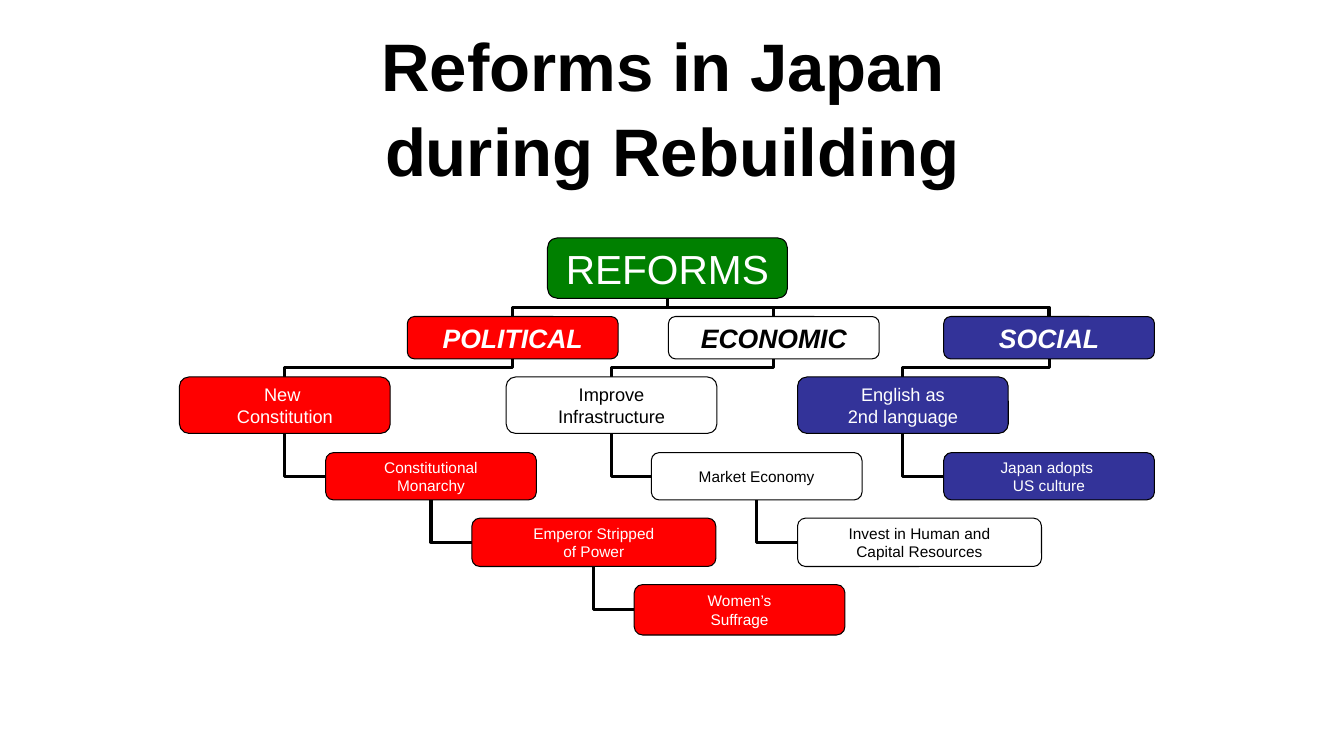
from pptx import Presentation
from pptx.dml.color import RGBColor
from pptx.enum.shapes import MSO_CONNECTOR, MSO_SHAPE
from pptx.enum.text import MSO_ANCHOR, MSO_AUTO_SIZE, PP_ALIGN
from pptx.oxml.ns import qn
from pptx.util import Emu, Pt
from lxml import etree

ELBOW = MSO_CONNECTOR.ELBOW
ROUNDED = MSO_SHAPE.ROUNDED_RECTANGLE
MIDDLE = MSO_ANCHOR.MIDDLE
CENTER = PP_ALIGN.CENTER
NO_FIT = MSO_AUTO_SIZE.NONE

PX = 9144  # 100 px to the inch
QUARTER_TURN = "5400000"

THEME = {
    "font": "Arial",
    "black": RGBColor(0x00, 0x00, 0x00),
    "white": RGBColor(0xFF, 0xFF, 0xFF),
    "green": RGBColor(0x00, 0x80, 0x00),
    "red": RGBColor(0xFF, 0x00, 0x00),
    "blue": RGBColor(0x33, 0x33, 0x99),
    "title": 48, "root": 29, "branch": 19, "topic": 13, "detail": 11,
    "outline": 0.75, "link": 2.25,
}


def write_text(shape, text, *, size, color, bold=False, italic=False,
               inset=(10, 5), wrap=False, spacing=None):
    frame = shape.text_frame
    frame.auto_size = NO_FIT
    frame.word_wrap = wrap
    frame.vertical_anchor = MIDDLE
    frame.margin_left = frame.margin_right = Emu(inset[0] * PX)
    frame.margin_top = frame.margin_bottom = Emu(inset[1] * PX)
    frame.text = text
    for para in frame.paragraphs:
        para.alignment = CENTER
        para.line_spacing = spacing
        for span in para.runs:
            span.font.name = THEME["font"]
            span.font.size = Pt(THEME[size])
            span.font.bold = bold
            span.font.italic = italic
            span.font.color.rgb = THEME[color]


def add_elbow(shapes, x1, y1, x2, y2):
    link = shapes.add_connector(ELBOW, *(Emu(round(v * PX)) for v in (x1, y1, x2, y2)))
    link.line.color.rgb = THEME["black"]
    link.line.width = Pt(THEME["link"])
    etree.SubElement(link._element.spPr, qn("a:effectLst"))
    return link


deck = Presentation()
deck.slide_width = Emu(1333 * PX)
deck.slide_height = Emu(750 * PX)
page = deck.slides.add_slide(deck.slide_layouts[5])
shapes = page.shapes

# Title
title = shapes.title
title.left, title.top, title.width, title.height = (
    Emu(v * PX) for v in (217, 30, 900, 148))
write_text(title, "Reforms in Japan \vduring Rebuilding", size="title",
           color="black", bold=True, wrap=True, spacing=1.05)

# Chart levels: top, height, type size
LEVELS = [
    (236, 60, "root"), (314, 42, "branch"), (374, 56, "topic"),
    (449, 47, "detail"), (514, 48, "detail"), (580, 50, "detail"),
]

# Boxes: text, parent, level, left, width, fill
NODES = [
    ("REFORMS", None, 0, 543, 238, "green"),
    ("POLITICAL", "REFORMS", 1, 404, 209, "red"),
    ("ECONOMIC", "REFORMS", 1, 663, 209, "white"),
    ("SOCIAL", "REFORMS", 1, 936, 209, "blue"),
    ("New \nConstitution", "POLITICAL", 2, 178, 209, "red"),
    ("Improve\nInfrastructure", "ECONOMIC", 2, 502, 209, "white"),
    ("English as\n2nd language", "SOCIAL", 2, 791, 209, "blue"),
    ("Constitutional\nMonarchy", "New \nConstitution", 3, 323, 209, "red"),
    ("Emperor Stripped\nof Power", "Constitutional\nMonarchy", 4, 468, 242, "red"),
    ("Women’s\nSuffrage", "Emperor Stripped\nof Power", 5, 629, 209, "red"),
    ("Market Economy", "Improve\nInfrastructure", 3, 646, 209, "white"),
    ("Invest in Human and\nCapital Resources", "Market Economy", 4, 791, 242, "white"),
    ("Japan adopts \nUS culture", "English as\n2nd language", 3, 936, 209, "blue"),
]

# Links, behind the boxes
bottoms = {}
for text, parent, level, left, width, fill in NODES:
    top, height, size = LEVELS[level]
    center = left + width / 2
    bottoms[text] = (center, top + height)
    if parent is None:
        continue
    parent_x, parent_y = bottoms[parent]
    if level < 3:
        # Down, across and down: a sideways elbow given a quarter turn
        mid_x, mid_y = (parent_x + center) / 2, (parent_y + top) / 2
        half_drop, half_run = (top - parent_y) / 2, (parent_x - center) / 2
        link = add_elbow(shapes, mid_x - half_drop, mid_y - half_run,
                         mid_x + half_drop, mid_y + half_run)
        link._element.spPr.find(qn("a:xfrm")).set("rot", QUARTER_TURN)
    else:
        # One corner, from the child's left side up to its parent
        link = add_elbow(shapes, left, top + height / 2, parent_x, parent_y)
        link._element.spPr.find(qn("a:prstGeom")).set("prst", "bentConnector2")

# Boxes
for text, parent, level, left, width, fill in NODES:
    top, height, size = LEVELS[level]
    box = shapes.add_shape(ROUNDED, *(Emu(v * PX) for v in (left, top, width, height)))
    box.shadow.inherit = False
    box.fill.solid()
    box.fill.fore_color.rgb = THEME[fill]
    box.line.color.rgb = THEME["black"]
    box.line.width = Pt(THEME["outline"])
    write_text(box, text, size=size, color="black" if fill == "white" else "white",
               bold=level == 1, italic=level == 1,
               inset=(7, 4) if level > 2 else (6, 3))

deck.save("out.pptx")
